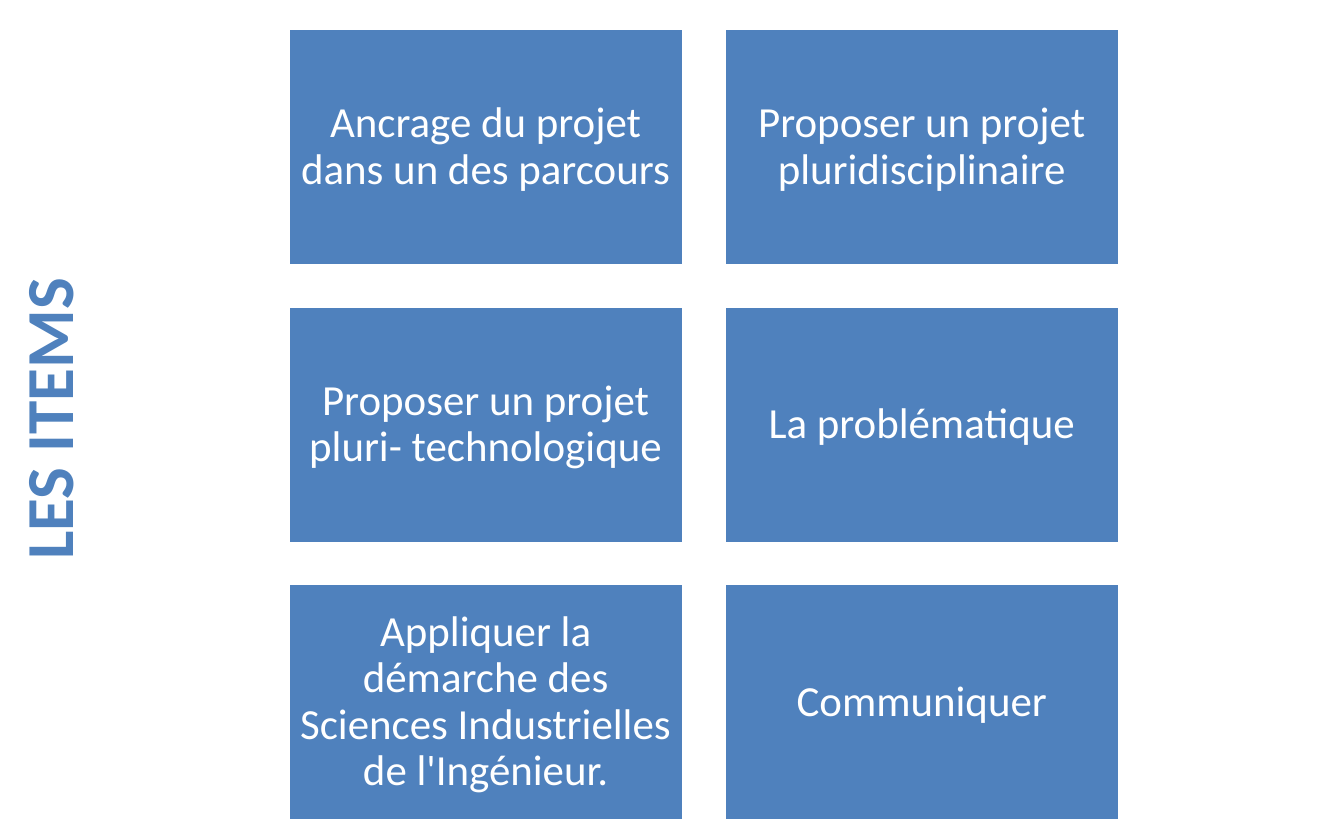
import pptx
import pptx.dml.color
import pptx.enum.shapes
import pptx.enum.text
import pptx.util

Inches, Pt = pptx.util.Inches, pptx.util.Pt
MIDDLE = pptx.enum.text.MSO_ANCHOR.MIDDLE
BLUE, WHITE = "4F81BD", "FFFFFF"


def rgb(hex_code):
    return pptx.dml.color.RGBColor.from_string(hex_code)


def write(frame, text, size, color, bold=False):
    """Fill a text frame with one centred paragraph."""
    frame.word_wrap = True
    paragraph = frame.paragraphs[0]
    paragraph.text = text
    paragraph.alignment = pptx.enum.text.PP_ALIGN.CENTER
    paragraph.font.name = "Calibri"
    paragraph.font.size = Pt(size)
    paragraph.font.bold = bold
    paragraph.font.color.rgb = rgb(color)
    return paragraph


deck = pptx.Presentation()
deck.slide_width, deck.slide_height = Inches(10), Inches(6.25)
slide = deck.slides.add_slide(deck.slide_layouts[6])

# Heading, read upwards along the left edge
heading = slide.shapes.add_textbox(Inches(-2.78), Inches(2.76), Inches(6.27), Inches(0.71))
heading.rotation = 270
write(heading.text_frame, "LES ITEMS", 36, BLUE, bold=True)

# Items in two columns and three rows
items = [
    "Ancrage du projet dans un des parcours",
    "Proposer un projet pluridisciplinaire",
    "Proposer un projet pluri- technologique",
    "La problématique",
    "Appliquer la démarche des Sciences Industrielles de l'Ingénieur.",
    "Communiquer",
]
columns = 2
left, top = 2.14, 0.21
card_width, card_height = 2.95, 1.77
gap = 0.295

for index, item in enumerate(items):
    row, column = divmod(index, columns)
    card = slide.shapes.add_shape(
        pptx.enum.shapes.MSO_SHAPE.RECTANGLE,
        Inches(left + column * (card_width + gap)),
        Inches(top + row * (card_height + gap)),
        Inches(card_width),
        Inches(card_height),
    )
    card.shadow.inherit = False
    card.fill.solid()
    card.fill.fore_color.rgb = rgb(BLUE)
    card.line.color.rgb = rgb(WHITE)
    card.line.width = Pt(2)
    frame = card.text_frame
    frame.vertical_anchor = MIDDLE
    frame.margin_left = frame.margin_right = Inches(0.09)
    frame.margin_top = frame.margin_bottom = Inches(0.09)
    write(frame, item, 23, WHITE).line_spacing = 0.9

deck.save("out.pptx")
